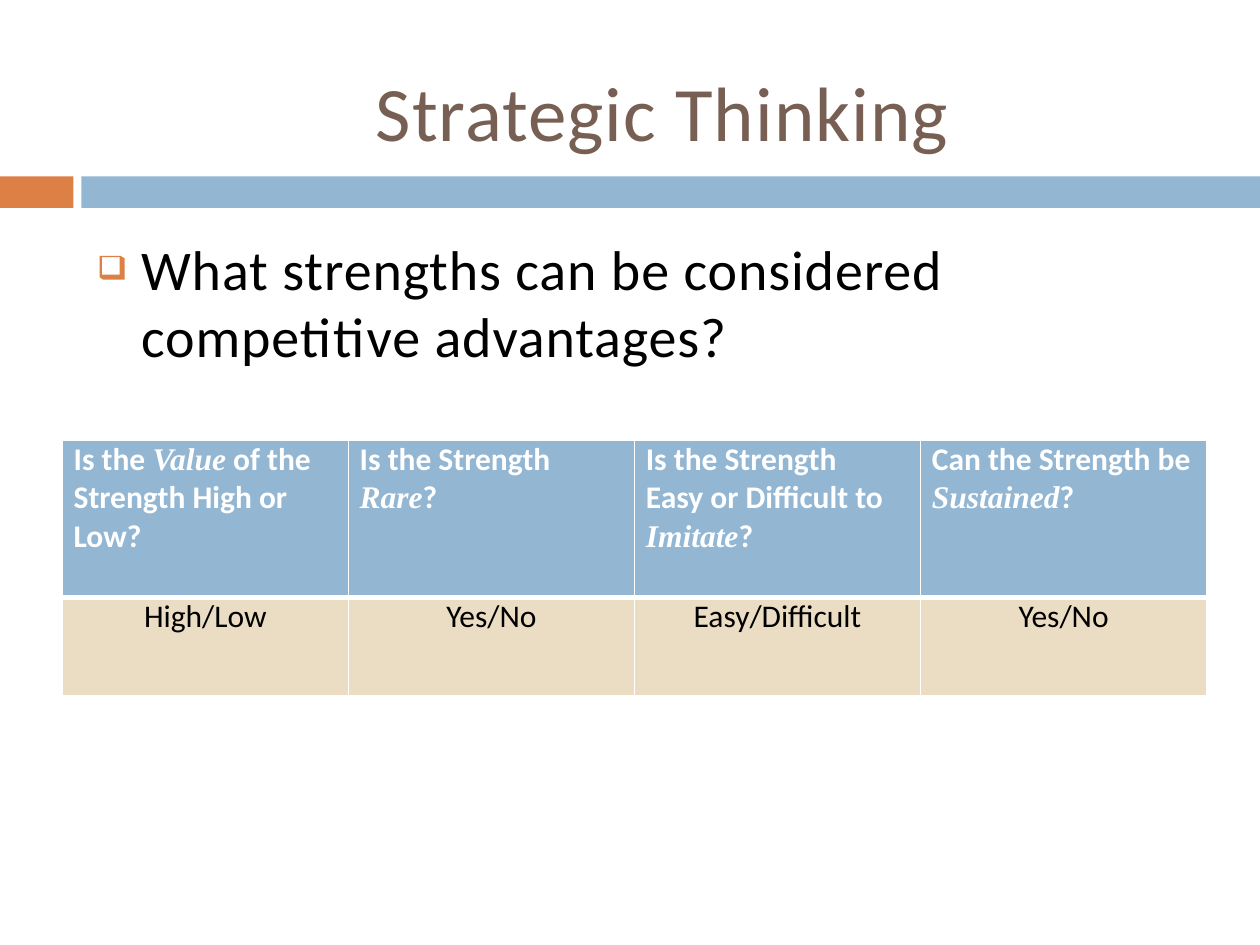
from dataclasses import dataclass

from lxml import etree
from pptx import Presentation
from pptx.dml.color import RGBColor
from pptx.enum.shapes import MSO_SHAPE
from pptx.enum.text import MSO_ANCHOR, PP_ALIGN
from pptx.oxml.ns import qn
from pptx.util import Pt

RECT = MSO_SHAPE.RECTANGLE
TOP = MSO_ANCHOR.TOP
LEFT, CENTER = PP_ALIGN.LEFT, PP_ALIGN.CENTER

ORANGE = RGBColor(0xDD, 0x80, 0x46)
BLUE = RGBColor(0x93, 0xB6, 0xD2)
BROWN = RGBColor(0x77, 0x5F, 0x54)
SAND = RGBColor(0xEB, 0xDD, 0xC3)
BLACK = RGBColor(0, 0, 0)
WHITE = RGBColor(0xFF, 0xFF, 0xFF)

SANS, SERIF = "Calibri", "Times New Roman"


@dataclass
class Band:
    left: float
    width: float
    color: RGBColor


@dataclass
class Label:
    text: str
    left: float
    top: float
    width: float
    height: float
    size: float
    color: RGBColor
    space: float
    indent: float = 0
    drop: float = 0


@dataclass
class Head:
    """Lines of text; words between asterisks are serif italic."""
    lines: list[str]
    right: float = 0


BANDS = [Band(0, 42, ORANGE), Band(46.5, 673.5, BLUE)]

LABELS = [
    Label("Strategic Thinking", 54.7, 14.4, 611.3, 90, 44, BROWN, 0.6, 160, 22.3),
    Label("What strengths can be considered competitive advantages?",
          80.6, 133.9, 598.3, 72.7, 32, BLACK, 0.5),
]

# Hollow square with a thick shade at its right and bottom
BOX = [
    [(69.1, 146.2), (56.9, 146.2), (56.9, 158.4), (59, 159.8), (71.3, 159.8),
     (71.3, 157), (58.3, 157), (58.3, 146.9), (69.8, 146.9)],
    [(69.8, 146.9), (68.4, 146.9), (68.4, 157), (71.3, 157), (71.3, 147.6)],
]

HEADS = [
    Head(["Is the *Value* of the Strength High or Low?"], 20),
    Head(["Is the Strength", "*Rare*?"]),
    Head(["Is the Strength Easy or Difficult to *Imitate*?"], 12),
    Head(["Can the Strength be", "*Sustained*?"]),
]
REPLIES = ["High/Low", "Yes/No", "Easy/Difficult", "Yes/No"]


def add_run(para, text: str, size: float, color: RGBColor, face: str = SANS,
            bold: bool = False, slant: bool = False, space: float = 0) -> None:
    run = para.add_run()
    run.text = text
    font = run.font
    font.name, font.size, font.bold, font.italic = face, Pt(size), bold, slant
    font.color.rgb = color
    if space:
        font._element.set("spc", str(round(space * 100)))


def paint(shape, color: RGBColor) -> None:
    shape.shadow.inherit = False
    shape.fill.solid()
    shape.fill.fore_color.rgb = color
    shape.line.fill.background()


def add_band(shapes, band: Band) -> None:
    paint(shapes.add_shape(RECT, Pt(band.left), Pt(100.8), Pt(band.width), Pt(18)),
          band.color)


def add_label(shapes, label: Label) -> None:
    box = shapes.add_textbox(Pt(label.left), Pt(label.top),
                             Pt(label.width), Pt(label.height))
    frame = box.text_frame
    frame.word_wrap = True
    frame.vertical_anchor = TOP
    frame.margin_left, frame.margin_top = Pt(label.indent), Pt(label.drop)
    frame.margin_right = frame.margin_bottom = 0
    add_run(frame.paragraphs[0], label.text, label.size, label.color,
            space=label.space)


def add_box(shapes) -> None:
    paths = [[(Pt(x), Pt(y)) for x, y in path] for path in BOX]
    pen = shapes.build_freeform(*paths[0][0])
    pen.add_line_segments(paths[0][1:], close=True)
    for path in paths[1:]:
        pen.move_to(*path[0])
        pen.add_line_segments(path[1:], close=True)
    paint(pen.convert_to_shape(), ORANGE)


def style_cell(cell, color: RGBColor, above: float, below: float,
               left: float = 0, right: float = 0) -> None:
    cell.fill.solid()
    cell.fill.fore_color.rgb = color
    cell.vertical_anchor = TOP
    cell.margin_left, cell.margin_right = Pt(left), Pt(right)
    cell.margin_top = cell.margin_bottom = 0
    props = cell._tc.get_or_add_tcPr()
    edges = [("a:lnL", 1), ("a:lnR", 1), ("a:lnT", above), ("a:lnB", below)]
    for spot, (tag, width) in enumerate(edges):
        line = etree.Element(qn(tag), w=str(Pt(width)))
        fill = etree.SubElement(line, qn("a:solidFill"))
        etree.SubElement(fill, qn("a:srgbClr"), val=str(WHITE))
        props.insert(spot, line)


def fill_head(cell, head: Head) -> None:
    style_cell(cell, BLUE, 1, 3, 6.5, head.right)
    frame = cell.text_frame
    for row, text in enumerate(head.lines):
        para = frame.add_paragraph() if row else frame.paragraphs[0]
        para.alignment = LEFT
        for part, words in enumerate(text.split("*")):
            slant = part % 2 == 1
            if words:
                add_run(para, words, 18, WHITE, SERIF if slant else SANS,
                        True, slant)


def fill_reply(cell, text: str) -> None:
    style_cell(cell, SAND, 3, 1)
    para = cell.text_frame.paragraphs[0]
    para.alignment = CENTER
    add_run(para, text, 18, BLACK)


def add_grid(shapes) -> None:
    grid = shapes.add_table(2, len(HEADS), Pt(35.6), Pt(251.6),
                            Pt(654), Pt(146)).table
    grid.first_row = grid.horz_banding = False
    for row, height in zip(grid.rows, (90, 56)):
        row.height = Pt(height)
    for col, (head, reply) in enumerate(zip(HEADS, REPLIES)):
        grid.columns[col].width = Pt(163.5)
        fill_head(grid.cell(0, col), head)
        fill_reply(grid.cell(1, col), reply)


def main() -> None:
    deck = Presentation()
    deck.slide_width, deck.slide_height = Pt(720), Pt(540)
    shapes = deck.slides.add_slide(deck.slide_layouts[6]).shapes

    # Divider bands
    for band in BANDS:
        add_band(shapes, band)

    # Title and question
    for label in LABELS:
        add_label(shapes, label)
    add_box(shapes)

    # Table of tests
    add_grid(shapes)

    deck.save("out.pptx")


if __name__ == "__main__":
    main()
